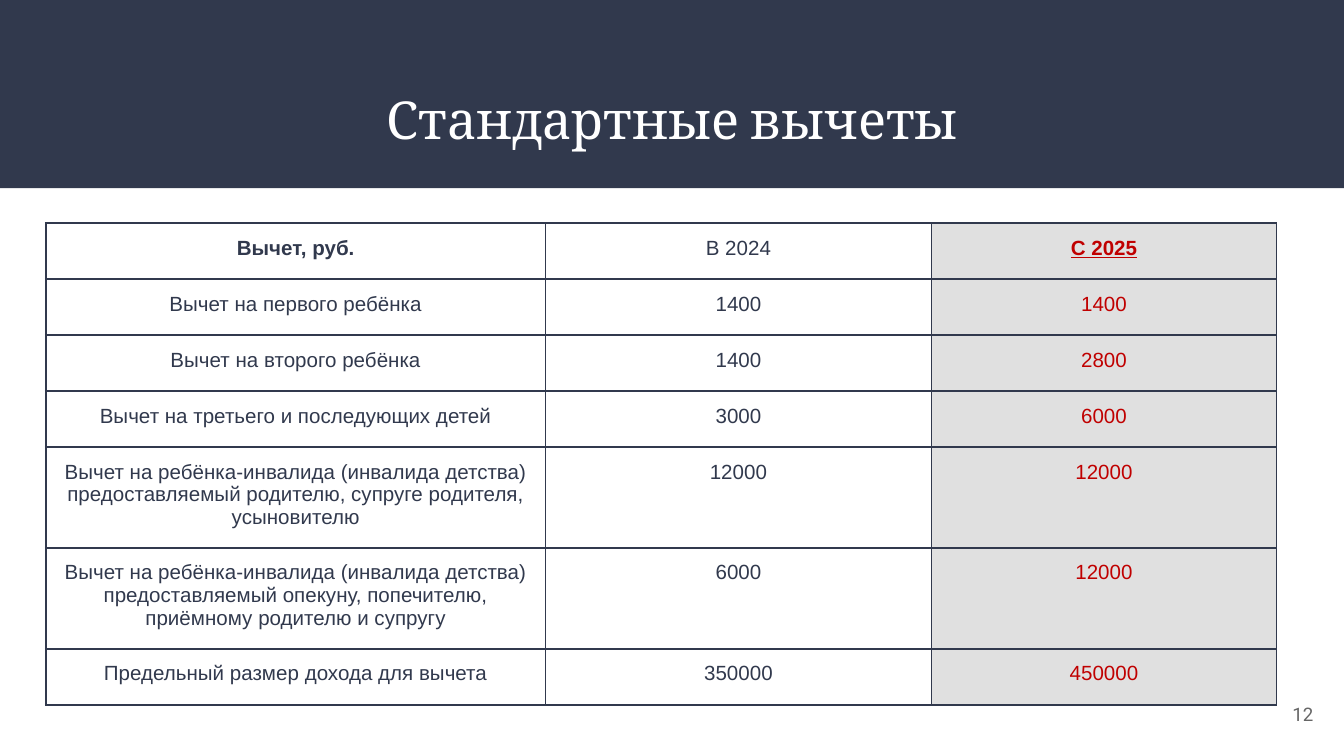
import pptx
import pptx.dml.color
import pptx.enum.shapes
import pptx.enum.text
import pptx.oxml
import pptx.util
from pptx.util import Inches

COLORS = {"navy": "31394D", "white": "FFFFFF", "red": "C00000",
          "shade": "E0E0E0", "gray": "666666"}
ALIGN = pptx.enum.text.PP_ALIGN
ANCHOR = pptx.enum.text.MSO_ANCHOR

COLUMN_WIDTHS = [3.72, 2.87, 2.57]
ROW_HEIGHT = 5 / 12  # rows with several lines grow by themselves
DEDUCTIONS = [
    ("Вычет, руб.", "В 2024", "С 2025"),
    ("Вычет на первого ребёнка", "1400", "1400"),
    ("Вычет на второго ребёнка", "1400", "2800"),
    ("Вычет на третьего и последующих детей", "3000", "6000"),
    ("Вычет на ребёнка-инвалида (инвалида детства) предоставляемый "
     "родителю, супруге родителя, усыновителю", "12000", "12000"),
    ("Вычет на ребёнка-инвалида (инвалида детства) предоставляемый "
     "опекуну, попечителю, приёмному родителю и супругу", "6000", "12000"),
    ("Предельный размер дохода для вычета", "350000", "450000"),
]


def rgb(name):
    return pptx.dml.color.RGBColor.from_string(COLORS[name])


def write(frame, text, size=11, font="Arial", color="navy", bold=False,
          underline=False, align=ALIGN.CENTER):
    """Put one formatted paragraph in a text frame with even margins."""
    frame.word_wrap = True
    frame.margin_left = frame.margin_right = Inches(0.1)
    frame.margin_top = frame.margin_bottom = Inches(0.1)
    paragraph = frame.paragraphs[0]
    paragraph.alignment = align
    run = paragraph.add_run()
    run.text = text
    run.font.size = pptx.util.Pt(size)
    run.font.name = font
    run.font.bold = bold
    run.font.underline = underline
    run.font.color.rgb = rgb(color)


def add_borders(cell, color="navy", width=1):
    """Draw all four borders; they must precede the cell's fill."""
    properties = cell._tc.get_or_add_tcPr()
    for position, side in enumerate(("lnL", "lnR", "lnT", "lnB")):
        properties.insert(position, pptx.oxml.parse_xml(
            f'<a:{side} xmlns:a="http://schemas.openxmlformats.org/drawingml/2006/main" '
            f'w="{pptx.util.Pt(width)}"><a:solidFill><a:srgbClr val="{COLORS[color]}"/>'
            f'</a:solidFill></a:{side}>'))


def add_header(slide, left, top, width, height):
    # Band across the top
    band = slide.shapes.add_shape(
        pptx.enum.shapes.MSO_SHAPE.RECTANGLE,
        Inches(left), Inches(top), Inches(width), Inches(height))
    band.shadow.inherit = False
    band.fill.solid()
    band.fill.fore_color.rgb = rgb("navy")
    band.line.fill.background()
    # Title
    title = slide.shapes.add_textbox(
        Inches(left + 0.34), Inches(top + 0.55), Inches(width - 0.68), Inches(0.68))
    write(title.text_frame, "Стандартные вычеты", size=28, font="Cambria", color="white")


def add_deductions(slide, left, top, height):
    holder = slide.shapes.add_table(
        len(DEDUCTIONS), len(COLUMN_WIDTHS), Inches(left), Inches(top),
        Inches(sum(COLUMN_WIDTHS)), Inches(height))
    table = holder.table
    table.first_row = table.horz_banding = False
    for column, width in zip(table.columns, COLUMN_WIDTHS):
        column.width = Inches(width)
    for row in table.rows:
        row.height = Inches(ROW_HEIGHT)
    holder.height = Inches(height)

    # The last column is the highlighted new year
    for row, values in enumerate(DEDUCTIONS):
        for column, value in enumerate(values):
            cell = table.cell(row, column)
            newest = column == len(values) - 1
            header = row == 0
            cell.margin_left = cell.margin_right = Inches(0.1)
            cell.margin_top = cell.margin_bottom = Inches(0.1)
            write(cell.text_frame, value, color="red" if newest else "navy",
                  bold=header and column != 1, underline=header and newest)
            if newest:
                cell.fill.solid()
                cell.fill.fore_color.rgb = rgb("shade")
            else:
                cell.fill.background()
            add_borders(cell)


def add_page_number(slide, left, top, width, height):
    number = slide.shapes.add_textbox(
        Inches(left), Inches(top), Inches(width), Inches(height))
    number.text_frame.vertical_anchor = ANCHOR.MIDDLE
    write(number.text_frame, "12", size=10, font="Roboto", color="gray", align=ALIGN.RIGHT)


def main():
    deck = pptx.Presentation()
    # Widescreen, 16:9
    deck.slide_width, deck.slide_height = Inches(10), Inches(10 * 9 / 16)
    slide = deck.slides.add_slide(deck.slide_layouts[6])
    slide.background.fill.solid()
    slide.background.fill.fore_color.rgb = rgb("white")
    add_header(slide, 0, 0, 10, 1.4)
    add_deductions(slide, 0.34, 1.66, 3.58)
    add_page_number(slide, 9.27, 5.1, 0.6, 0.43)
    deck.save("out.pptx")


if __name__ == "__main__":
    main()
